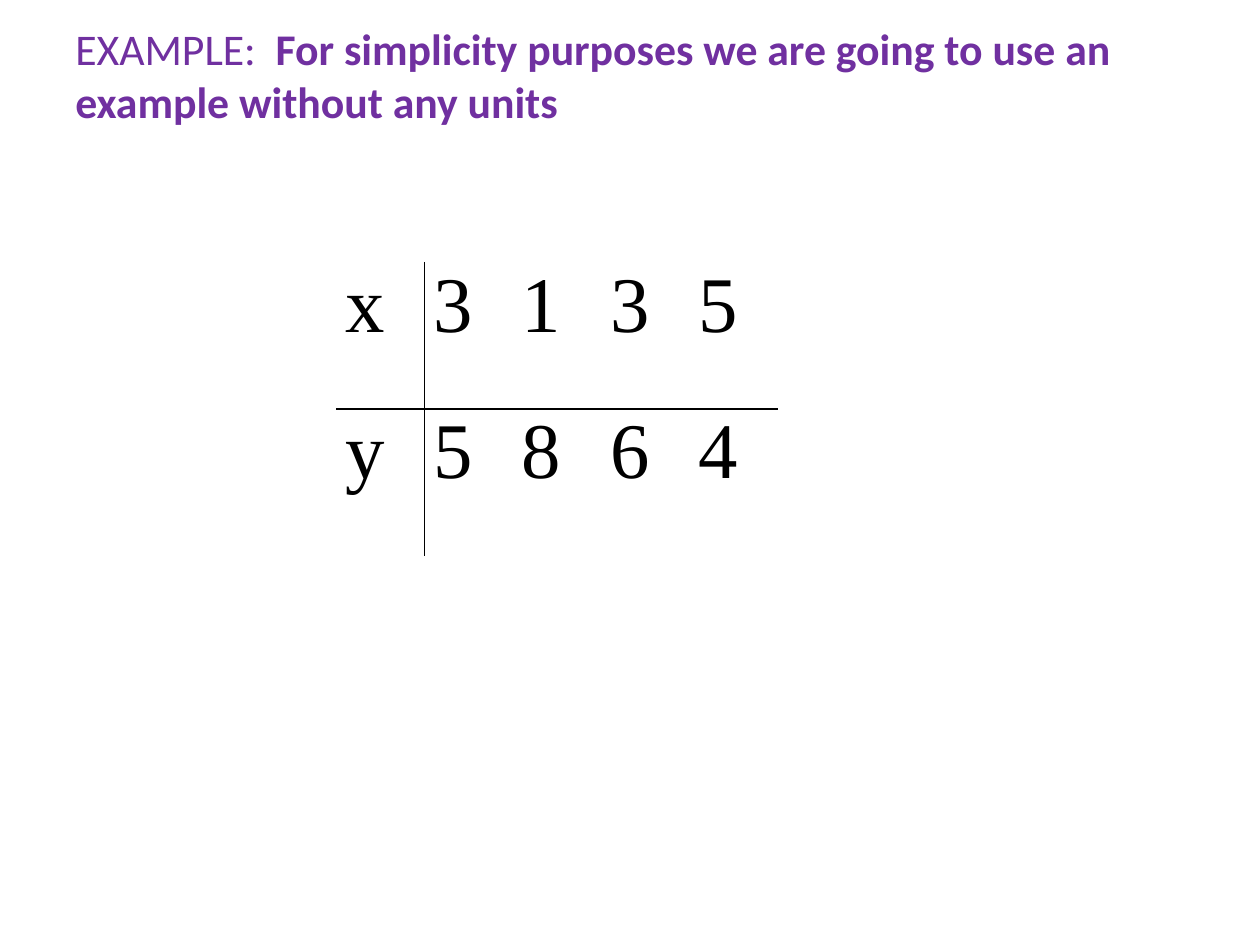
import pptx
import pptx.util
import pptx.dml.color
import pptx.enum.text
import lxml.etree

Cm, Pt = pptx.util.Cm, pptx.util.Pt

# Content
title = [("EXAMPLE:  ", False),
         ("For simplicity purposes we are going to use an example without any units", True)]
rows = [["x", "3", "1", "3", "5"],
        ["y", "5", "8", "6", "4"]]
wide, high = 1.78, 2.96


def style(font, name, size, color):
    font.name, font.size = name, Pt(size)
    font.color.rgb = pptx.dml.color.RGBColor.from_string(color)


def edge(cell, side, color=None):
    props = cell._tc.get_or_add_tcPr()
    line = lxml.etree.SubElement(props, pptx.oxml.ns.qn("a:ln" + side))
    if color:
        line.set("w", str(Pt(1)))
        fill = lxml.etree.SubElement(line, pptx.oxml.ns.qn("a:solidFill"))
        lxml.etree.SubElement(fill, pptx.oxml.ns.qn("a:srgbClr")).set("val", color)
    else:
        lxml.etree.SubElement(line, pptx.oxml.ns.qn("a:noFill"))


deck = pptx.Presentation()
deck.slide_width, deck.slide_height = Cm(25.4), Cm(19.05)
slide = deck.slides.add_slide(deck.slide_layouts[6])

# Title
frame = slide.shapes.add_textbox(Cm(1.27), Cm(0.3), Cm(22.86), Cm(2.41)).text_frame
frame.word_wrap = True
frame.vertical_anchor = pptx.enum.text.MSO_ANCHOR.MIDDLE
par = frame.paragraphs[0]
style(par.font, "Calibri", 25, "7030A0")
for text, bold in title:
    run = par.add_run()
    run.text, run.font.bold = text, bold

# Table of x and y values, ruled only between heads and values
table = slide.shapes.add_table(len(rows), len(rows[0]), Cm(6.78), Cm(5.28),
                               Cm(wide * len(rows[0])), Cm(high * len(rows))).table
table.first_row = table.horz_banding = False
for col in table.columns:
    col.width = Cm(wide)
for r, row in enumerate(rows):
    table.rows[r].height = Cm(high)
    for c, text in enumerate(row):
        cell = table.cell(r, c)
        cell.text = text
        cell.margin_left = cell.margin_right = Cm(0.18)
        cell.margin_top = cell.margin_bottom = 0
        style(cell.text_frame.paragraphs[0].font, "Times New Roman", 45, "000000")
        ruled = {"L": c == 1, "R": c == 0, "T": r == 1, "B": r == 0}
        for side, on in ruled.items():
            edge(cell, side, "000000" if on else None)
        cell.fill.background()

deck.save("out.pptx")
